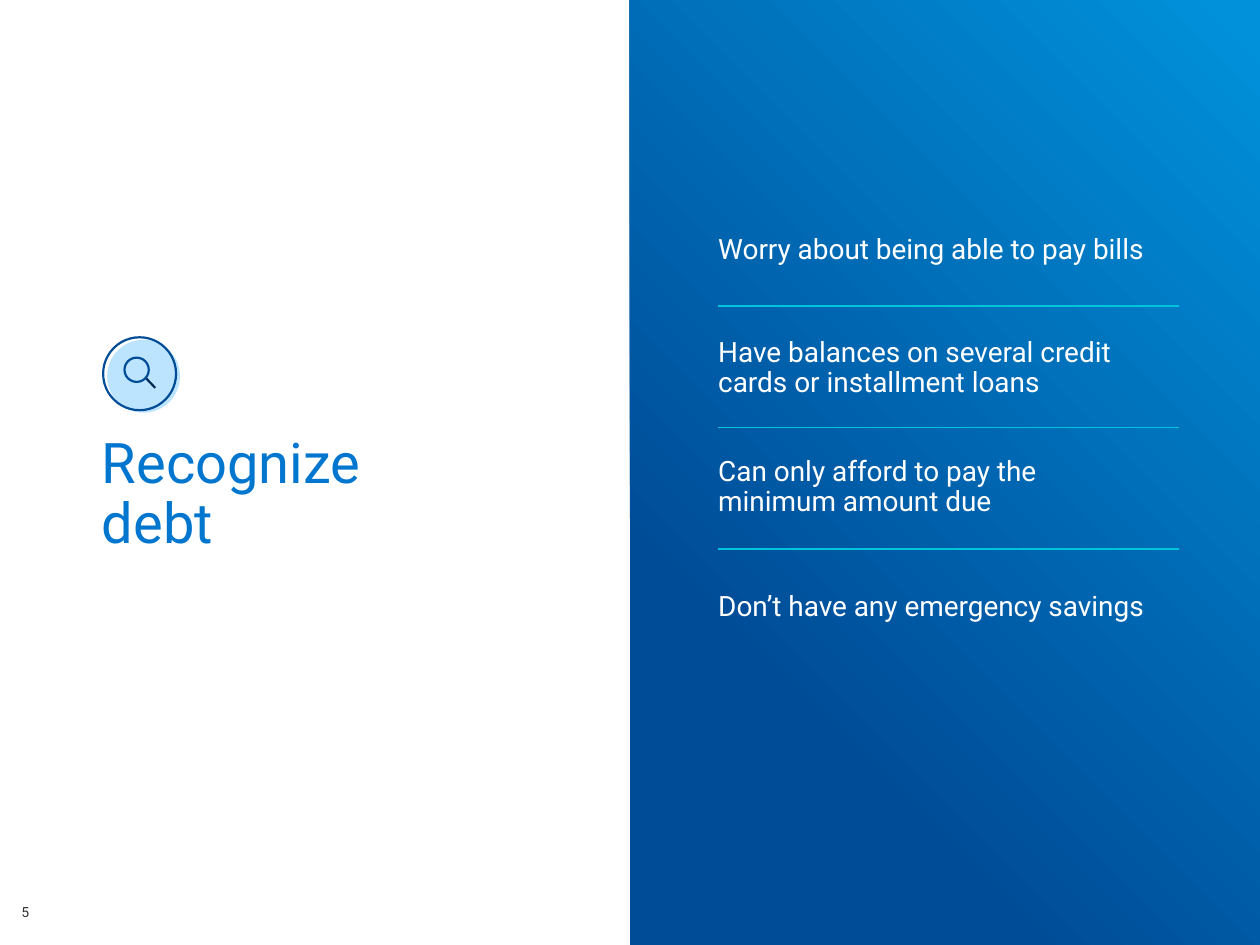
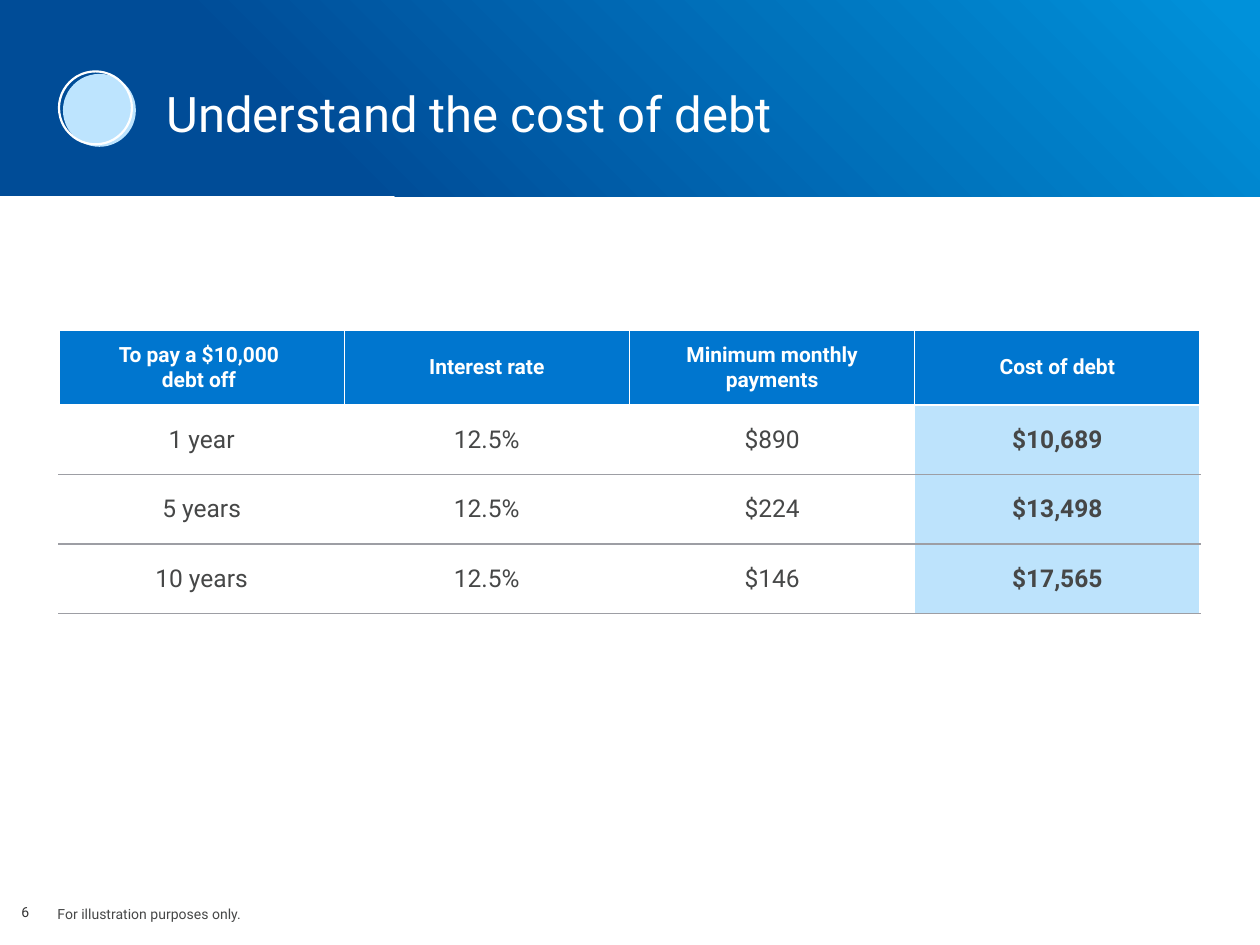
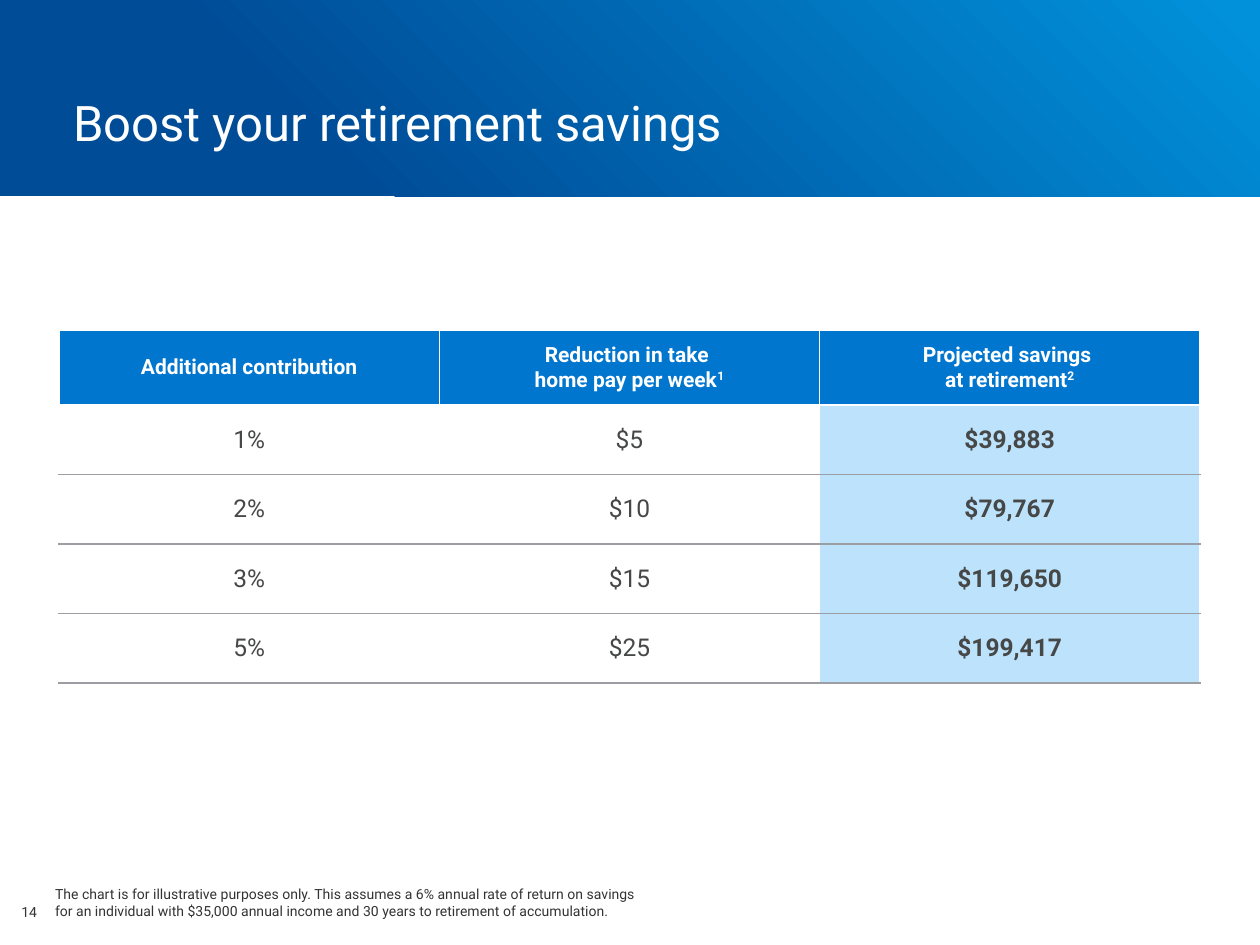
from copy import deepcopy
from dataclasses import dataclass
from typing import NamedTuple

from lxml import etree
from pptx import Presentation
from pptx import util as u
from pptx.dml import color
from pptx.enum import shapes, text
from pptx.oxml import ns


@dataclass(frozen=True)
class Theme:
    font: str = "Roboto"
    navy: str = "004C97"
    ink: str = "002855"
    sky: str = "0091DA"
    blue: str = "0076CF"
    pale: str = "BDE4FE"
    highlight: str = "BDE3FC"
    teal: str = "00C4D9"
    white: str = "FFFFFF"
    rule: str = "9D9EA4"
    body: str = "464747"
    note: str = "333333"
    cover_size: int = 32
    title_size: int = 28
    point_size: int = 16
    cell_size: int = 14
    head_size: int = 12
    note_size: int = 8
    icon_line: float = 1.25
    point_line: float = 0.75
    border: float = 1


T = Theme()


class Box(NamedTuple):
    left: float
    top: float
    width: float
    height: float

    def lengths(self) -> list:
        return [u.Cm(v) for v in self]


class Style(NamedTuple):
    size: int
    colour: str
    bold: bool = False


class Heading(NamedTuple):
    label: str
    mark: str = ""


@dataclass(frozen=True)
class CostTable:
    headings: list[Heading]
    rows: list[list[str]]


TABLE = Box(1.19, 6.65, 23, 1.4)
BAND = Box(0, 0, 25.4, 3.96)


def rgb(code: str) -> color.RGBColor:
    return color.RGBColor.from_string(code)


def add_run(p, label: str, style: Style, baseline: int = 0):
    r = p.add_run()
    r.text = label
    f = r.font
    f.name, f.size, f.bold = T.font, u.Pt(style.size), style.bold
    f.color.rgb = rgb(style.colour)
    if baseline:
        f._element.set("baseline", str(baseline * 1000))
    return r


def write(p, label: str, style: Style, spacing: float | None = None) -> None:
    if spacing:
        p.line_spacing = spacing
    for i, line in enumerate(label.split("\n")):
        if i:
            br = etree.SubElement(p._p, ns.qn("a:br"))
            br.append(deepcopy(r.font._element))
        r = add_run(p, line, style)


def add_text(s, box: Box, label: str, style: Style):
    tf = s.shapes.add_textbox(*box.lengths()).text_frame
    tf.word_wrap = True
    write(tf.paragraphs[0], label, style)
    return tf


def add_title(s, box: Box, label: str, style: Style, spacing: float | None = None) -> None:
    sp = s.shapes.title
    s.shapes._spTree.append(sp._element)
    sp.left, sp.top, sp.width, sp.height = box.lengths()
    tf = sp.text_frame
    tf.word_wrap = True
    tf.auto_size = text.MSO_AUTO_SIZE.NONE
    tf.vertical_anchor = text.MSO_ANCHOR.TOP
    p = tf.paragraphs[0]
    p.alignment = text.PP_ALIGN.LEFT
    write(p, label, style, spacing)


def add_note(s, box: Box, label: str, colour: str = T.note) -> None:
    tf = add_text(s, box, label, Style(T.note_size, colour))
    tf.auto_size = text.MSO_AUTO_SIZE.SHAPE_TO_FIT_TEXT


def add_gradient(s, box: Box) -> None:
    sp = s.shapes.add_shape(shapes.MSO_SHAPE.RECTANGLE, *box.lengths())
    sp.shadow.inherit = False
    sp.line.fill.background()
    sp.fill.gradient()
    sp.fill.gradient_angle = 45
    for stop, position, code in zip(sp.fill.gradient_stops, (0.25, 0.98), (T.navy, T.sky)):
        stop.position = position
        stop.color.rgb = rgb(code)


def add_circle(s, left: float, top: float, size: float,
               fill: str | None = None, line: str | None = None) -> None:
    sp = s.shapes.add_shape(shapes.MSO_SHAPE.OVAL, *Box(left, top, size, size).lengths())
    sp.shadow.inherit = False
    if fill:
        sp.fill.solid()
        sp.fill.fore_color.rgb = rgb(fill)
    else:
        sp.fill.background()
    if line:
        sp.line.color.rgb = rgb(line)
        sp.line.width = u.Pt(T.icon_line)
    else:
        sp.line.fill.background()


def add_badge(s, left: float, top: float, ring: str) -> None:
    add_circle(s, left + 0.08, top + 0.05, 1.47, fill=T.pale)
    add_circle(s, left, top, 1.47, line=ring)


def add_line(s, x1: float, y1: float, x2: float, y2: float, colour: str, width: float) -> None:
    ends = [u.Cm(v) for v in (x1, y1, x2, y2)]
    c = s.shapes.add_connector(shapes.MSO_CONNECTOR.STRAIGHT, *ends)
    c.line.color.rgb = rgb(colour)
    c.line.width = u.Pt(width)
    etree.SubElement(c._element.spPr, ns.qn("a:effectLst"))


def set_borders(cell, top: str, bottom: str) -> None:
    tc_pr = cell._tc.get_or_add_tcPr()
    sides = {"L": T.white, "R": T.white, "T": top, "B": bottom}
    for i, (side, code) in enumerate(sides.items()):
        ln = etree.Element(ns.qn(f"a:ln{side}"), w=str(u.Pt(T.border)))
        fill = etree.SubElement(ln, ns.qn("a:solidFill"))
        etree.SubElement(fill, ns.qn("a:srgbClr"), val=code)
        tc_pr.insert(i, ln)


def fill_cell(cell, label: str, style: Style, fill: str | None, mark: str = "") -> None:
    cell.vertical_anchor = text.MSO_ANCHOR.MIDDLE
    p = cell.text_frame.paragraphs[0]
    p.alignment = text.PP_ALIGN.CENTER
    write(p, label, style)
    if mark:
        add_run(p, mark, style, baseline=30)
    if fill:
        cell.fill.solid()
        cell.fill.fore_color.rgb = rgb(fill)
    else:
        cell.fill.background()


def add_cost_table(s, data: CostTable) -> None:
    n_rows, n_cols = len(data.rows) + 1, len(data.headings)
    box = TABLE._replace(height=TABLE.height * n_rows)
    table = s.shapes.add_table(n_rows, n_cols, *box.lengths()).table
    table.first_row = table.horz_banding = False
    for column in table.columns:
        column.width = u.Cm(TABLE.width / n_cols)
    for c, heading in enumerate(data.headings):
        cell = table.cell(0, c)
        cell.margin_top = cell.margin_bottom = u.Cm(0.25)
        fill_cell(cell, heading.label, Style(T.head_size, T.white, True), T.blue, heading.mark)
        set_borders(cell, T.white, T.white)
    for r, row in enumerate(data.rows, 1):
        for c, value in enumerate(row):
            cell = table.cell(r, c)
            last = c == n_cols - 1
            fill_cell(cell, value, Style(T.cell_size, T.body, last), T.highlight if last else None)
            set_borders(cell, T.white if r == 1 else T.rule, T.rule)


def new_slide(prs, number: int, panel: Box):
    s = prs.slides.add_slide(prs.slide_layouts[5])
    add_note(s, Box(0.18, 18.08, 9.42, 0.61), str(number))
    add_gradient(s, panel)
    return s


def recognize_slide(prs) -> None:
    s = new_slide(prs, 5, Box(12.7, 0, 12.7, 19.05))
    add_title(s, Box(1.8, 8.64, 11.79, 1.27), "Recognize \ndebt",
              Style(T.cover_size, T.blue), 0.9)
    signs = [
        "Worry about being able to pay bills",
        "Have balances on several credit cards or installment loans",
        "Can only afford to pay the minimum amount due",
        "Don’t have any emergency savings",
    ]
    for i, sign in enumerate(signs):
        tf = add_text(s, Box(12.7, 4.19 + 2.41 * i, 11.68, 1.65), sign,
                      Style(T.point_size, T.white))
        tf.vertical_anchor = text.MSO_ANCHOR.MIDDLE
        tf.margin_left, tf.margin_right = u.Cm(1.78), u.Cm(1.02)
        tf.margin_top = tf.margin_bottom = u.Cm(0.25)
        if i:
            tf.paragraphs[0].line_spacing = 0.9
            y = 6.17 + 2.45 * (i - 1)
            add_line(s, 14.48, y, 23.76, y, T.teal, T.point_line)
    add_badge(s, 2.08, 6.8, T.navy)
    add_circle(s, 2.51, 7.21, 0.49, line=T.navy)
    add_line(s, 2.95, 7.63, 3.13, 7.82, T.ink, T.icon_line)


def cost_slide(prs) -> None:
    s = new_slide(prs, 6, BAND)
    add_cost_table(s, CostTable(
        [Heading("To pay a $10,000 \ndebt off "), Heading("Interest rate"),
         Heading("Minimum monthly payments"), Heading("Cost of debt")],
        [["1 year", "12.5%", "$890", "$10,689"],
         ["5 years", "12.5%", "$224", "$13,498"],
         ["10 years", "12.5%", "$146", "$17,565"]]))
    add_title(s, Box(3.1, 1.7, 21, 1.27), "Understand the cost of debt",
              Style(T.title_size, T.white), 0.9)
    add_badge(s, 1.19, 1.44, T.white)
    add_note(s, Box(0.91, 18.13, 12.7, 0.61), "For illustration purposes only.", T.body)


def savings_slide(prs) -> None:
    s = new_slide(prs, 14, BAND)
    add_cost_table(s, CostTable(
        [Heading("Additional contribution"),
         Heading("Reduction in take \nhome pay per week", "1"),
         Heading("Projected savings \nat retirement", "2")],
        [["1%", "$5", "$39,883"],
         ["2%", "$10", "$79,767"],
         ["3%", "$15", "$119,650"],
         ["5%", "$25", "$199,417"]]))
    add_title(s, Box(1.22, 1.73, 16.33, 1.27), "Boost your retirement savings",
              Style(T.title_size, T.white))
    add_note(s, Box(0.86, 17.73, 12.47, 0.94),
             "The chart is for illustrative purposes only. This assumes a 6% annual rate of return "
             "on savings for an individual with $35,000 annual income and 30 years to retirement "
             "of accumulation.")


def main() -> None:
    prs = Presentation()
    prs.slide_width, prs.slide_height = u.Cm(25.4), u.Cm(19.05)
    recognize_slide(prs)
    cost_slide(prs)
    savings_slide(prs)
    prs.save("out.pptx")


if __name__ == "__main__":
    main()
